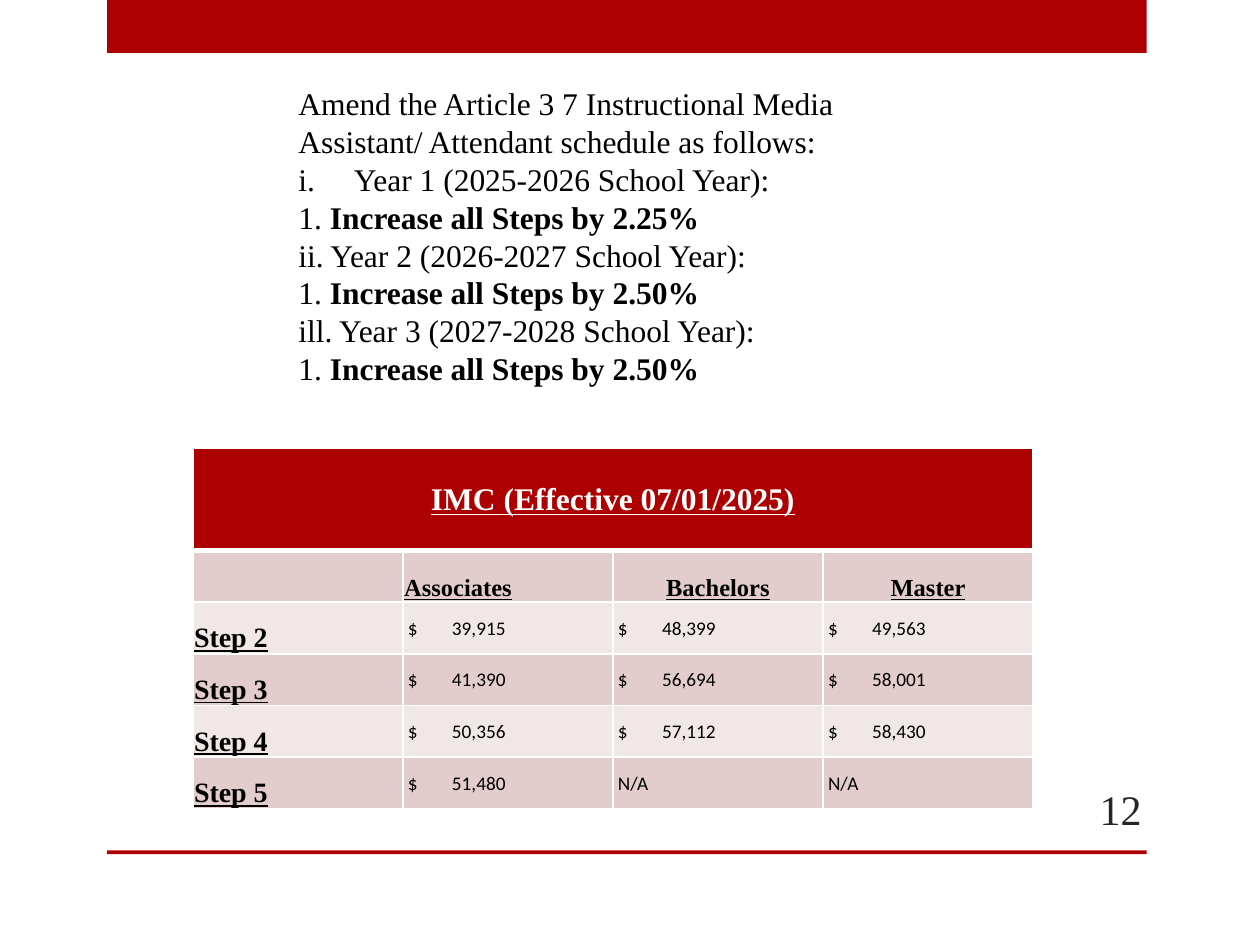
from lxml import etree
from pptx import Presentation
from pptx import util as u
from pptx.dml.color import RGBColor
from pptx.enum import shapes, text
from pptx.oxml import ns

COLORS = {"red": "AD0101", "dark band": "E3CCCC", "light band": "F1E7E7",
          "white": "FFFFFF", "black": "000000", "number": "262626"}
SERIF = "Times New Roman"


def style(font, size, color="black", name=SERIF, bold=False, underline=False):
    font.size = u.Pt(size)
    font.name = name
    font.bold = bold
    font.underline = underline
    font.color.rgb = RGBColor.from_string(COLORS[color])


def add_border(cell, side, points):
    line = etree.SubElement(cell._tc.get_or_add_tcPr(), ns.qn(f"a:ln{side}"),
                            w=str(u.Pt(points)))
    fill = etree.SubElement(line, ns.qn("a:solidFill"))
    etree.SubElement(fill, ns.qn("a:srgbClr"), val=COLORS["white"])


deck = Presentation()
deck.slide_width, deck.slide_height = u.Inches(10), u.Inches(7.5)
page = deck.slides.add_slide(deck.slide_layouts[6])

for top, height in [(0, 0.42), (6.75, 0.03)]:
    bar = page.shapes.add_shape(shapes.MSO_SHAPE.RECTANGLE, u.Inches(0.85),
                                u.Inches(top), u.Inches(8.25), u.Inches(height))
    bar.shadow.inherit = False
    bar.fill.solid()
    bar.fill.fore_color.rgb = RGBColor.from_string(COLORS["red"])
    bar.line.fill.background()

number_box = page.shapes.add_textbox(u.Inches(8.33), u.Inches(6.22),
                                     u.Inches(0.83), u.Inches(0.4))
number_box.text_frame.word_wrap = True
number_box.text_frame.vertical_anchor = text.MSO_ANCHOR.MIDDLE
para = number_box.text_frame.paragraphs[0]
para.text = "12"
para.alignment = text.PP_ALIGN.RIGHT
style(para.font, 24, "number")

rows = [
    ["IMC (Effective 07/01/2025)", "", "", ""],
    ["", "Associates", "Bachelors", "Master"],
    ["Step 2", "39,915", "48,399", "49,563"],
    ["Step 3", "41,390", "56,694", "58,001"],
    ["Step 4", "50,356", "57,112", "58,430"],
    ["Step 5", "51,480", "N/A", "N/A"],
]
table = page.shapes.add_table(len(rows), 4, u.Inches(1.53), u.Inches(3.56),
                              u.Inches(6.67), u.Inches(2.86)).table
table.cell(0, 0).merge(table.cell(0, 3))
for row_index, values in enumerate(rows):
    table.rows[row_index].height = u.Inches(0.41 if row_index else 0.81)
    band = "dark band" if row_index % 2 else "light band"
    for column_index, value in enumerate(values):
        cell = table.cell(row_index, column_index)
        is_amount = row_index > 1 and column_index > 0
        for side in "LRTB":
            at_title_edge = (row_index, side) in [(0, "B"), (1, "T")]
            add_border(cell, side, 3 if at_title_edge else 1)
        cell.fill.solid()
        cell.fill.fore_color.rgb = RGBColor.from_string(
            COLORS[band if row_index else "red"])
        cell.margin_left = u.Inches(0.04 if is_amount else 0.01)
        cell.margin_right = cell.margin_top = u.Inches(0.01)
        cell.margin_bottom = 0
        cell.vertical_anchor = (text.MSO_ANCHOR.MIDDLE if is_amount or row_index == 0
                                else text.MSO_ANCHOR.BOTTOM)
        para = cell.text_frame.paragraphs[0]
        if is_amount:
            para.text = value if value == "N/A" else f"$\t{value}"
            style(para.font, 11, name="Calibri")
            tabs = etree.SubElement(para._p.get_or_add_pPr(), ns.qn("a:tabLst"))
            etree.SubElement(tabs, ns.qn("a:tab"), pos=str(u.Inches(0.35)), algn="l")
            para._p.pPr.insert(0, tabs)
        else:
            para.text = value
            size = {0: 18, 1: 14}.get(row_index, 16)
            style(para.font, size, "black" if row_index else "white",
                  bold=True, underline=True)
            if row_index == 0 or (row_index == 1 and column_index > 1):
                para.alignment = text.PP_ALIGN.CENTER

terms_box = page.shapes.add_textbox(u.Inches(2.27), u.Inches(0.62),
                                    u.Inches(5), u.Inches(2.52))
terms = terms_box.text_frame
terms.word_wrap = True
terms.auto_size = text.MSO_AUTO_SIZE.SHAPE_TO_FIT_TEXT
lines = [
    ("Amend the Article 3 7 Instructional Media Assistant/ Attendant schedule as follows:", ""),
    ("Year 1 (2025-2026 School Year):", ""),
    ("1. ", "Increase all Steps by 2.25%"),
    ("ii. Year 2 (2026-2027 School Year):", ""),
    ("1. ", "Increase all Steps by 2.50%"),
    ("ill. Year 3 (2027-2028 School Year):", ""),
    ("1. ", "Increase all Steps by 2.50%"),
]
for index, (plain, strong) in enumerate(lines):
    para = terms.add_paragraph() if index else terms.paragraphs[0]
    style(para.font, 18)
    para.add_run().text = plain
    if strong:
        span = para.add_run()
        span.text = strong
        span.font.bold = True

numbered = terms.paragraphs[1]._p.get_or_add_pPr()
numbered.set("marL", str(u.Inches(0.44)))
numbered.set("indent", str(-u.Inches(0.44)))
numbered.insert(0, etree.Element(ns.qn("a:buAutoNum"), type="romanLcPeriod"))

deck.save("out.pptx")
